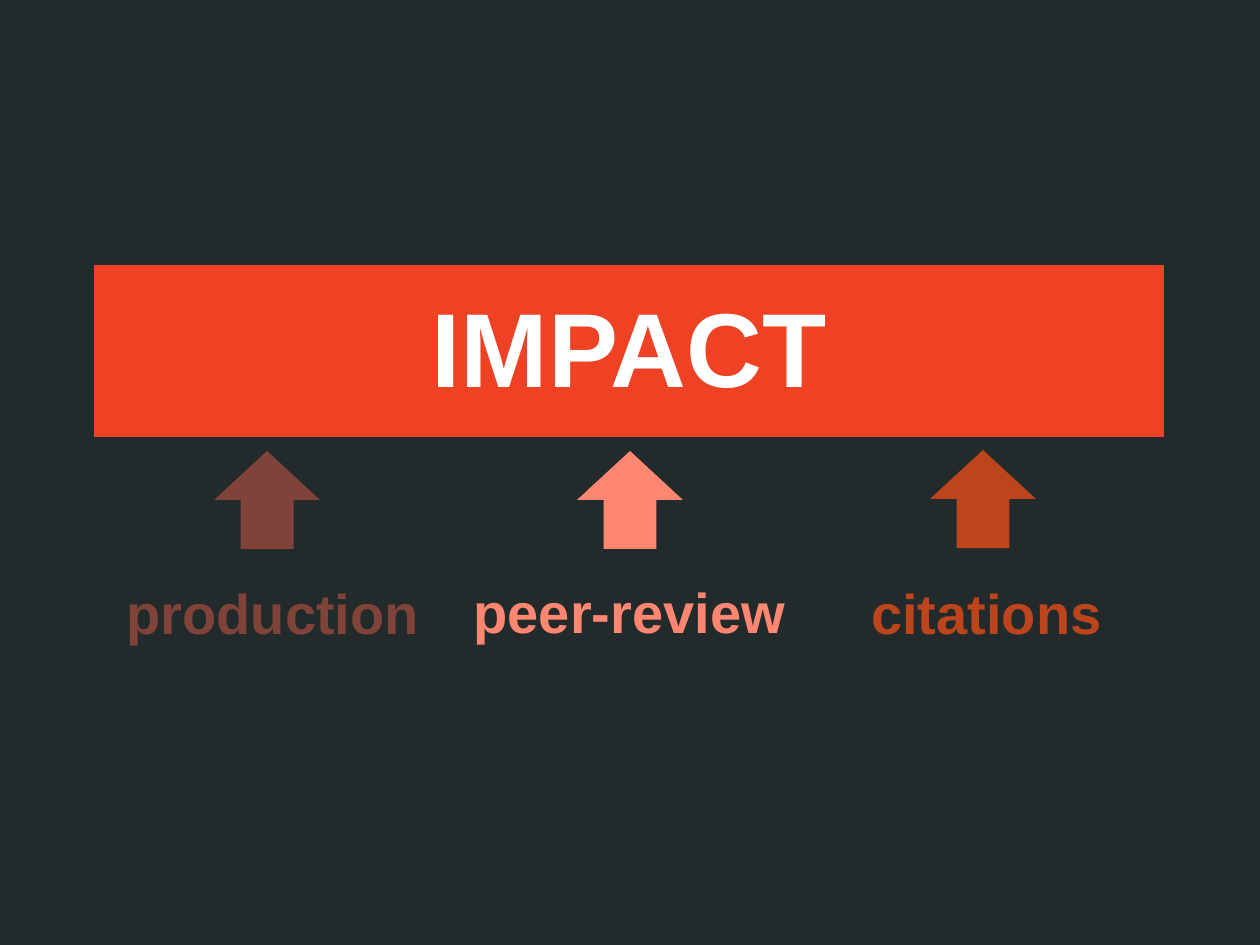
from pptx import Presentation
from pptx.dml.color import RGBColor
from pptx.enum.shapes import MSO_SHAPE
from pptx.enum.text import MSO_ANCHOR, MSO_AUTO_SIZE, PP_ALIGN
from pptx.oxml.ns import qn
from pptx.util import Emu, Pt

EMU_PER_PX = 914400 // 126
BACKGROUND = RGBColor(0x23, 0x2A, 0x2C)
BANNER = RGBColor(0xEF, 0x41, 0x23)
WHITE = RGBColor(0xFF, 0xFF, 0xFF)
BROWN = RGBColor(0x7F, 0x43, 0x39)
SALMON = RGBColor(0xFF, 0x87, 0x72)
RUST = RGBColor(0xBC, 0x45, 0x1B)

NO_STYLE_NO_GRID = "{2D5ABB26-0587-4C30-8999-92F81FD0307C}"
ROW_HEIGHTS = (172, 240)
ARROW_SIZE = (106, 98)
LABEL_HEIGHT = 80

# label, colour, arrow left and top, label left, top and width
FACTORS = [
    ("production", BROWN, (214, 451), (113, 572, 320)),
    ("peer-review", SALMON, (577, 451), (460, 571, 339)),
    ("citations", RUST, (930, 450), (858, 572, 257)),
]


def px(*lengths):
    return [Emu(length * EMU_PER_PX) for length in lengths]


def write_text(text_frame, text, size, color):
    """Write one centred, bold line."""
    paragraph = text_frame.paragraphs[0]
    paragraph.alignment = PP_ALIGN.CENTER
    run = paragraph.add_run()
    run.text = text
    run.font.name = "Arial"
    run.font.size = Pt(size)
    run.font.bold = True
    run.font.color.rgb = color


def add_impact_table(slide):
    """Add the banner row, merged across three columns, above an open row."""
    frame = slide.shapes.add_table(2, 3, *px(94, 265, 1070, sum(ROW_HEIGHTS)))
    table = frame.table
    properties = table._tbl.tblPr
    properties.find(qn("a:tableStyleId")).text = NO_STYLE_NO_GRID
    table.first_row = False
    table.horz_banding = False
    for row, height in zip(table.rows, px(*ROW_HEIGHTS)):
        row.height = height
    for cell in table.iter_cells():
        cell.fill.background()
    banner = table.cell(0, 0)
    banner.merge(table.cell(0, 2))
    banner.fill.solid()
    banner.fill.fore_color.rgb = BANNER
    banner.vertical_anchor = MSO_ANCHOR.MIDDLE
    write_text(banner.text_frame, "IMPACT", 60, WHITE)


def add_arrow(slide, position, color):
    arrow = slide.shapes.add_shape(
        MSO_SHAPE.DOWN_ARROW, *px(*position, *ARROW_SIZE))
    arrow.rotation = 180
    arrow.shadow.inherit = False
    arrow.fill.solid()
    arrow.fill.fore_color.rgb = color
    arrow.line.fill.background()


def add_label(slide, text, box, color):
    label = slide.shapes.add_textbox(*px(*box, LABEL_HEIGHT))
    label.text_frame.word_wrap = False
    label.text_frame.auto_size = MSO_AUTO_SIZE.SHAPE_TO_FIT_TEXT
    write_text(label.text_frame, text, 32, color)


def main():
    presentation = Presentation()
    presentation.slide_width, presentation.slide_height = px(1260, 945)
    slide = presentation.slides.add_slide(presentation.slide_layouts[6])
    slide.background.fill.solid()
    slide.background.fill.fore_color.rgb = BACKGROUND

    add_impact_table(slide)
    for text, color, arrow_position, label_box in FACTORS:
        add_arrow(slide, arrow_position, color)
        add_label(slide, text, label_box, color)

    presentation.save("out.pptx")


if __name__ == "__main__":
    main()
